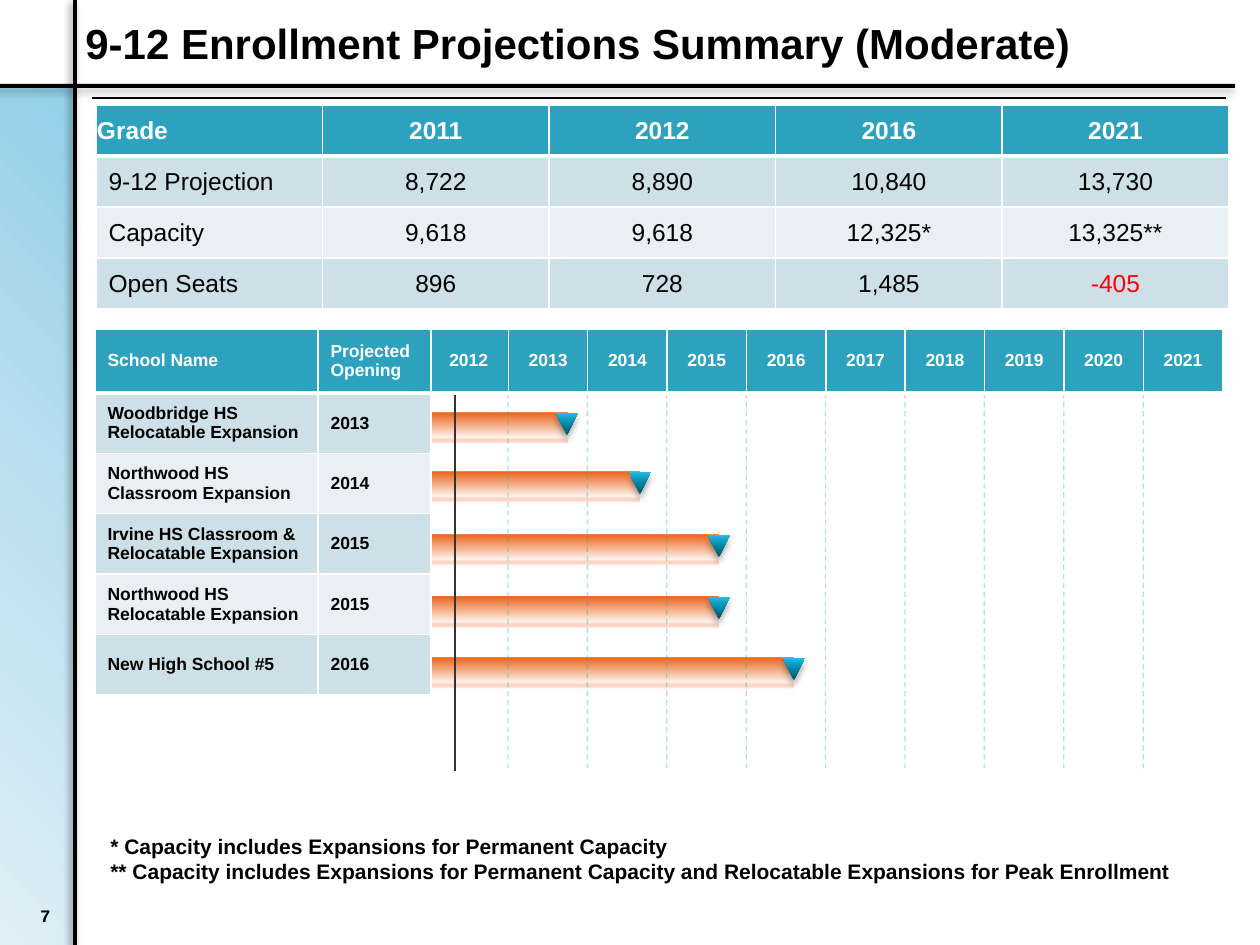
import pptx
import pptx.dml.color
import pptx.enum.dml
import pptx.enum.shapes
import pptx.enum.text
import pptx.oxml
import pptx.oxml.ns
import pptx.util

PX = 914400 / 126
NS = 'xmlns:a="http://schemas.openxmlformats.org/drawingml/2006/main"'
SHAPE = pptx.enum.shapes.MSO_SHAPE
ALIGN = pptx.enum.text.PP_ALIGN
ANCHOR = pptx.enum.text.MSO_ANCHOR
TEAL, PALE, PALER = "2DA2BF", "CDE0E8", "E8F0F4"
WHITE, BLACK, RED = "FFFFFF", "000000", "FF0000"


def style(frame, size, color, align=ALIGN.LEFT, bold=True, face="Arial"):
    for paragraph in frame.paragraphs:
        paragraph.alignment = align
        for run in paragraph.runs:
            run.font.size = pptx.util.Pt(size)
            run.font.name = face
            run.font.bold = bold
            run.font.color.rgb = pptx.dml.color.RGBColor.from_string(color)


def xml(markup):
    return pptx.oxml.parse_xml(f"<a:wrap {NS}>{markup}</a:wrap>")[0]


deck = pptx.Presentation()
deck.slide_width, deck.slide_height = pptx.util.Inches(10), pptx.util.Inches(7.5)
slide = deck.slides.add_slide(deck.slide_layouts[6])
shapes = slide.shapes

# Frame, project bars and markers: kind, box, gradient stops, direction, shadow
SIDE = [(0, "92CFE8", 100), (50, "BDE0EF", 100), (100, "DFEFF6", 100)]
BAR = [(0, "EB641B", 100), (65, "EB641B", 7), (81, WHITE, 100), (100, WHITE, 100)]
MARKER = [(0, "005367", 100), (50, "0086A7", 100), (70, "0E9ABE", 100), (100, "2CB9E3", 100)]
CORNER = '<a:path path="circle"><a:fillToRect l="100000" b="100000"/></a:path>'
DOWN, UP = '<a:lin ang="5400000" scaled="0"/>', '<a:lin ang="16200000" scaled="0"/>'
projects = [(413, 567), (472, 640), (535, 719), (597, 719), (658, 794)]

frame_parts = [
    (SHAPE.RECTANGLE, (0, 85, 73, 860), SIDE, CORNER, None),
    (SHAPE.RECTANGLE, (73, 0, 4, 945), None, None, (40, 135)),
    (SHAPE.RECTANGLE, (0, 84, 1235, 4), None, None, (40, 135)),
]
bars = [(SHAPE.RECTANGLE, (414, top, end - 414, 38), BAR, DOWN, None)
        for top, end in projects]
markers = [(SHAPE.FLOWCHART_MERGE, (end - 11, top, 22, 22), MARKER, UP, (35, 90))
           for top, end in projects]

for kind, box, stops, direction, shadow in frame_parts + bars + markers:
    part = shapes.add_shape(kind, *[round(v * PX) for v in box])
    part.shadow.inherit = False
    part.line.fill.background()
    if stops:
        stop_xml = "".join(
            f'<a:gs pos="{pos * 1000}"><a:srgbClr val="{color}">'
            f'<a:alpha val="{alpha * 1000}"/></a:srgbClr></a:gs>'
            for pos, color, alpha in stops)
        part.fill.background()
        properties = part._element.spPr
        empty = properties.find(pptx.oxml.ns.qn("a:noFill"))
        properties.replace(empty, xml(
            f'<a:gradFill><a:gsLst>{stop_xml}</a:gsLst>{direction}</a:gradFill>'))
    else:
        part.fill.solid()
        part.fill.fore_color.rgb = pptx.dml.color.RGBColor.from_string(BLACK)
    if shadow:
        opacity, angle = shadow
        effects = part._element.spPr.find(pptx.oxml.ns.qn("a:effectLst"))
        effects.append(xml(
            f'<a:outerShdw blurRad="50800" dist="38100" dir="{angle * 60000}">'
            f'<a:srgbClr val="{BLACK}"><a:alpha val="{opacity * 1000}"/></a:srgbClr>'
            '</a:outerShdw>'))

# Header rule, year grid and current-date line: ends, colour, opacity, dashed
rules = [((92, 98, 1226, 98), BLACK, 100, False)]
for year in range(9):
    x = 508 + 794 * year / 10
    rules.append(((x, 330, x, 771), TEAL, 35, True))
rules.append(((455, 330, 455, 771), "333333", 100, False))
for ends, color, opacity, dashed in rules:
    rule = shapes.add_connector(pptx.enum.shapes.MSO_CONNECTOR.STRAIGHT,
                                *[round(v * PX) for v in ends])
    rule.line.width = pptx.util.Pt(0.75)
    rule.line.color.rgb = pptx.dml.color.RGBColor.from_string(color)
    if dashed:
        rule.line.dash_style = pptx.enum.dml.MSO_LINE.DASH
        tint = next(rule._element.spPr.iter(pptx.oxml.ns.qn("a:srgbClr")))
        tint.append(xml(f'<a:alpha val="{opacity * 1000}"/>'))
    rule._element.spPr.append(xml("<a:effectLst/>"))

# Tables: position, column widths, row heights, size, bold body, centred from, rows
enrollment = [
    ["Grade", "2011", "2012", "2016", "2021"],
    ["9-12 Projection", "8,722", "8,890", "10,840", "13,730"],
    ["Capacity", "9,618", "9,618", "12,325*", "13,325**"],
    ["Open Seats", "896", "728", "1,485", "-405"],
]
years = [[str(year) for year in range(2012, 2022)]]
schools = [
    ["School Name", "Projected Opening"],
    ["Woodbridge HS Relocatable Expansion", "2013"],
    ["Northwood HS Classroom Expansion", "2014"],
    ["Irvine HS Classroom & Relocatable Expansion", "2015"],
    ["Northwood HS Relocatable Expansion", "2015"],
    ["New High School #5", "2016"],
]
tables = [
    (96, 105, [1133 / 5] * 5, [51] * 4, 14, False, 1, enrollment),
    (429, 329, [794 / 10] * 10, [64], 10, True, 0, years),
    (95, 329, [223, 113], [64] + [60.4] * 5, 10, True, 2, schools),
]
for left, top, widths, heights, size, bold_body, centred_from, rows in tables:
    box = (left, top, sum(widths), sum(heights))
    table = shapes.add_table(len(rows), len(widths), *[round(v * PX) for v in box]).table
    for column, width in zip(table.columns, widths):
        column.width = round(width * PX)
    for r, (row, height) in enumerate(zip(rows, heights)):
        table.rows[r].height = round(height * PX)
        for c, words in enumerate(row):
            cell = table.cell(r, c)
            cell.text_frame.text = words
            cell.vertical_anchor = ANCHOR.MIDDLE
            if rows is enrollment and r == 0:
                cell.margin_left = cell.margin_right = cell.margin_top = round(PX)
                cell.margin_bottom = 0
            color = WHITE if r == 0 else RED if words.startswith("-") else BLACK
            style(cell.text_frame, size, color,
                  ALIGN.CENTER if c >= centred_from else ALIGN.LEFT, bold_body or r == 0)
            cell.fill.solid()
            cell.fill.fore_color.rgb = pptx.dml.color.RGBColor.from_string(
                TEAL if r == 0 else PALE if r % 2 else PALER)
            thick = {"B": r == 0, "T": r == 1}
            for position, side in enumerate("LRTB"):
                points = 3 if thick.get(side) else 1
                cell._tc.get_or_add_tcPr().insert(position, xml(
                    f'<a:ln{side} w="{points * 12700}"><a:solidFill>'
                    f'<a:srgbClr val="{WHITE}"/></a:solidFill></a:ln{side}>'))

# Title, footnotes and page number
notes = ("* Capacity includes Expansions for Permanent Capacity\n"
         "** Capacity includes Expansions for Permanent Capacity and "
         "Relocatable Expansions for Peak Enrollment")
texts = [
    ((73, 0, 1017, 85), "9-12 Enrollment Projections Summary (Moderate)", 24,
     ANCHOR.MIDDLE, ALIGN.LEFT, "Arial"),
    ((98, 827, 1119, 63), notes, 12, ANCHOR.TOP, ALIGN.LEFT, "Arial"),
    ((13, 882, 50, 50), "7", 10, ANCHOR.BOTTOM, ALIGN.RIGHT, "Courier New"),
]
for box, words, size, anchor, align, face in texts:
    frame = shapes.add_textbox(*[round(v * PX) for v in box]).text_frame
    frame.word_wrap = True
    frame.vertical_anchor = anchor
    frame.text = words
    style(frame, size, BLACK, align, face=face)

deck.save("out.pptx")
